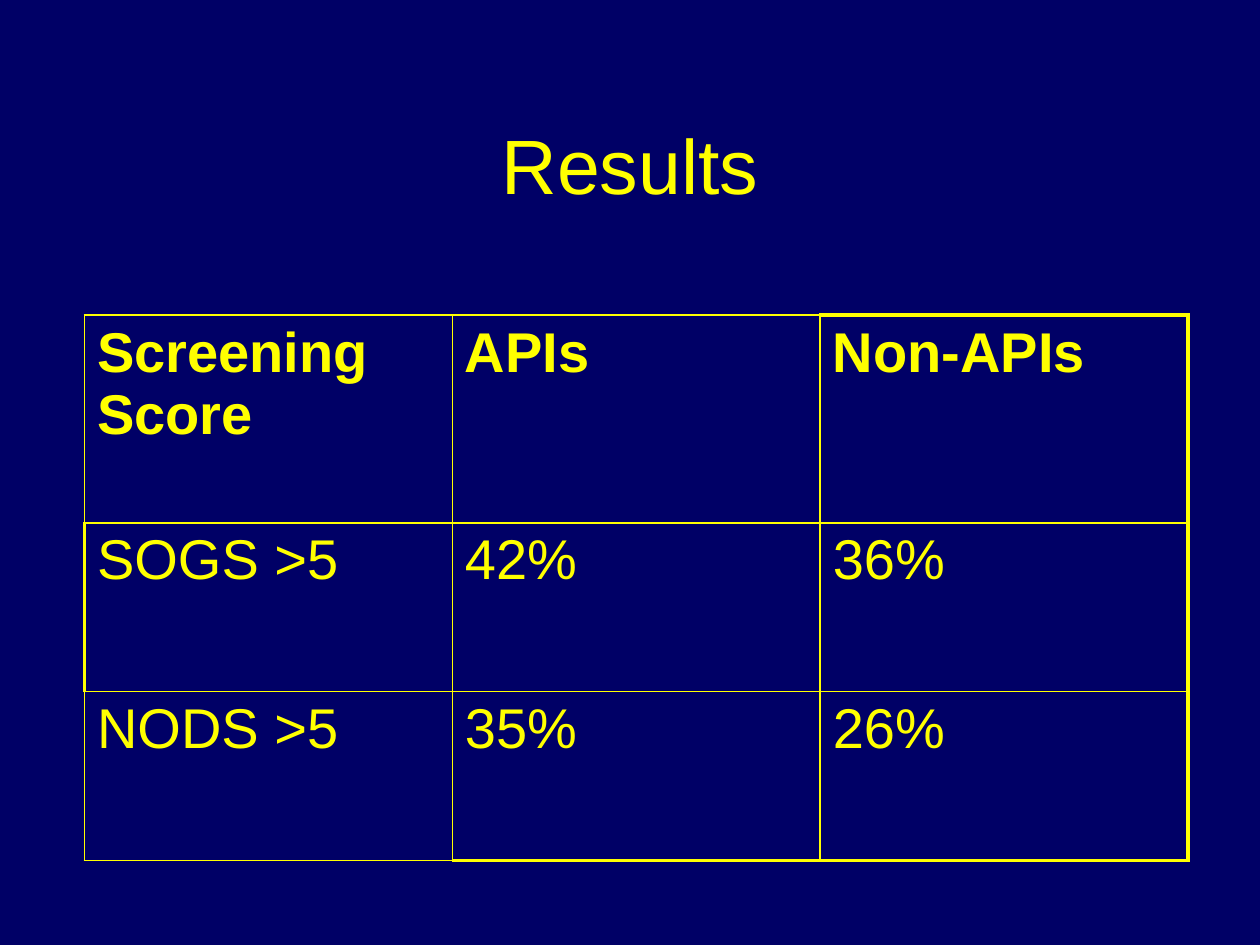
from lxml.etree import SubElement
from pptx import Presentation
from pptx.dml.color import RGBColor
from pptx.enum.text import MSO_ANCHOR, PP_ALIGN
from pptx.oxml.ns import qn
from pptx.util import Inches, Pt

NAVY, YELLOW = "000066", "FFFF00"
FONT = "Arial"
TITLE = "Results"
SCORES = [
    ("Screening Score", "APIs", "Non-APIs"),
    ("SOGS >5", "42%", "36%"),
    ("NODS >5", "35%", "26%"),
]
COLUMN_WIDTH = 2.92
ROW_HEIGHTS = [1.65, 1.34, 1.34]
THIN, THICK = 1, 2.25
# (row, column): sides with a thick border
THICK_SIDES = {
    (0, 2): "TR",
    (1, 0): "L",
    (1, 2): "R",
    (2, 1): "B",
    (2, 2): "RB",
}


def color(hex_code):
    return RGBColor.from_string(hex_code)


def write(frame, text, size=32, bold=False, align=PP_ALIGN.LEFT, anchor=MSO_ANCHOR.TOP):
    frame.word_wrap = True
    frame.vertical_anchor = anchor
    paragraph = frame.paragraphs[0]
    paragraph.alignment = align
    run = paragraph.add_run()
    run.text = text
    run.font.name = FONT
    run.font.size = Pt(size)
    run.font.bold = bold
    run.font.color.rgb = color(YELLOW)


def add_borders(cell, thick_sides):
    properties = cell._tc.get_or_add_tcPr()
    for side in "LRTB":
        width = Pt(THICK if side in thick_sides else THIN)
        line = SubElement(properties, qn(f"a:ln{side}"), w=str(width))
        fill = SubElement(line, qn("a:solidFill"))
        SubElement(fill, qn("a:srgbClr"), val=YELLOW)


def add_score_table(slide):
    columns = len(SCORES[0])
    table = slide.shapes.add_table(
        len(SCORES), columns, Inches(0.67), Inches(2.5),
        Inches(COLUMN_WIDTH * columns), Inches(sum(ROW_HEIGHTS)),
    ).table
    table.first_row = table.horz_banding = False
    for column in table.columns:
        column.width = Inches(COLUMN_WIDTH)
    for r, (height, values) in enumerate(zip(ROW_HEIGHTS, SCORES)):
        table.rows[r].height = Inches(height)
        for c, value in enumerate(values):
            cell = table.cell(r, c)
            write(cell.text_frame, value, bold=r == 0)
            add_borders(cell, THICK_SIDES.get((r, c), ""))
            cell.fill.background()


def main():
    deck = Presentation()
    deck.slide_width, deck.slide_height = Inches(10), Inches(7.5)
    slide = deck.slides.add_slide(deck.slide_layouts[6])
    slide.background.fill.solid()
    slide.background.fill.fore_color.rgb = color(NAVY)

    title = slide.shapes.add_textbox(Inches(0.75), Inches(0.67), Inches(8.5), Inches(1.25))
    write(title.text_frame, TITLE, size=44, align=PP_ALIGN.CENTER, anchor=MSO_ANCHOR.MIDDLE)
    add_score_table(slide)
    deck.save("out.pptx")


if __name__ == "__main__":
    main()
